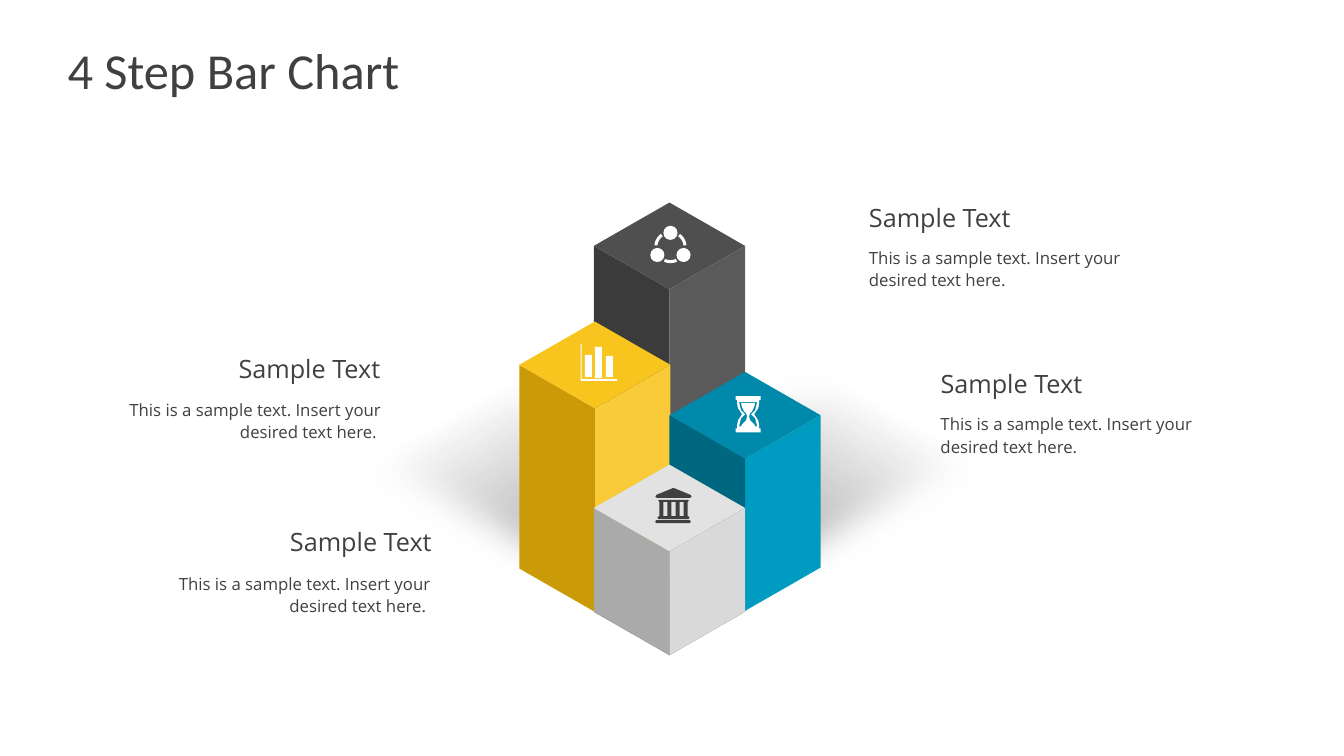
import math
import pptx
import pptx.util
import pptx.dml.color
import pptx.enum.shapes
import pptx.enum.text
import pptx.oxml
from pptx.util import Inches

MSO_SHAPE = pptx.enum.shapes.MSO_SHAPE
ALIGN = pptx.enum.text.PP_ALIGN
ANCHOR = pptx.enum.text.MSO_ANCHOR
NS = 'xmlns:a="http://schemas.openxmlformats.org/drawingml/2006/main"'
TEXT = "404040"
WHITE = "FFFFFF"

prs = pptx.Presentation()
prs.slide_width = Inches(13.33)
prs.slide_height = Inches(7.5)
slide = prs.slides.add_slide(prs.slide_layouts[6])
shapes = slide.shapes


def paint(sp, color):
    sp.shadow.inherit = False
    sp.fill.solid()
    sp.fill.fore_color.rgb = pptx.dml.color.RGBColor.from_string(color)
    sp.line.fill.background()
    return sp


def polygon(color, *contours):
    outline = [[(Inches(x), Inches(y)) for x, y in c] for c in contours]
    builder = shapes.build_freeform(*outline[0][0], scale=1.0)
    builder.add_line_segments(outline[0][1:], close=True)
    for contour in outline[1:]:
        builder.move_to(*contour[0])
        builder.add_line_segments(contour[1:], close=True)
    return paint(builder.convert_to_shape(), color)


# fmt: off
shadow_right = [(7.67, 6.15), (10.55, 4.48), (8.45, 3.2), (5.59, 4.66)]
shadow_left = [(13.33 - x, y + 0.03) for x, y in shadow_right]
for outline, angle in ((shadow_right, 120), (shadow_left, 60)):
    sp = polygon("000000", outline)
    spPr = sp.element.spPr
    gradient = pptx.oxml.parse_xml(
        f'<a:gradFill {NS} rotWithShape="1"><a:gsLst>'
        '<a:gs pos="32000"><a:srgbClr val="FFFFFF"><a:alpha val="65000"/></a:srgbClr></a:gs>'
        '<a:gs pos="99000"><a:srgbClr val="000000"><a:alpha val="55000"/></a:srgbClr></a:gs>'
        f'</a:gsLst><a:lin ang="{angle * 60000}" scaled="0"/></a:gradFill>')
    spPr.replace(spPr.find(pptx.oxml.ns.qn("a:solidFill")), gradient)
    effects = spPr.find(pptx.oxml.ns.qn("a:effectLst"))
    effects.append(pptx.oxml.parse_xml(f'<a:softEdge {NS} rad="{Inches(0.35)}"/>'))

half_w, half_h = 0.75, 0.43
columns = [
    (6.64, 2.01, 6.07, "3B3B3B", "5A5A5A", "4F4F4F"),
    (5.9, 3.19, 5.64, "CA9B06", "F9CB39", "F8C41E"),
    (7.39, 3.69, 5.63, "006780", "009BC0", "0089AA"),
    (6.64, 4.61, 6.07, "AAAAAA", "D9D9D9", "E2E2E2"),
]
for x, top, base, left_color, right_color, top_color in columns:
    middle, front = top + half_h, top + 2 * half_h
    for side, color in ((1, right_color), (-1, left_color)):
        edge = x + side * half_w
        polygon(color, [(x, front), (edge, middle), (edge, base), (x, base + half_h)])
    polygon(top_color, [(x, top), (x + half_w, middle), (x, front), (x - half_w, middle)])

body = "This is a sample text. Insert your desired text here."
labels = [
    (1.16, 3.46, 1.18, 3.9, ALIGN.RIGHT, body + " "),
    (1.67, 5.17, 1.67, 5.62, ALIGN.RIGHT, body + " "),
    (8.52, 1.96, 8.52, 2.39, ALIGN.LEFT, body),
    (9.23, 3.6, 9.23, 4.04, ALIGN.LEFT, body),
]
texts = [(0.67, 0.3, 12, 0.78, "4 Step Bar Chart", 36, "Calibri", ALIGN.LEFT, 1.0)]
for head_x, head_y, body_x, body_y, align, words in labels:
    texts.append((body_x, body_y, 2.7, 0.53, words, 12, "Open Sans", align, 1.1))
    texts.append((head_x, head_y, 2.71, 0.4, "Sample Text", 18, "Open Sans", align, 1.0))
for x, y, w, h, words, size, font, align, spacing in texts:
    box = shapes.add_textbox(Inches(x), Inches(y), Inches(w), Inches(h))
    tf = box.text_frame
    tf.word_wrap = True
    if size == 36:
        tf.vertical_anchor = ANCHOR.MIDDLE
        tf.margin_left = tf.margin_right = 0
    p = tf.paragraphs[0]
    p.alignment = align
    p.line_spacing = spacing
    r = p.add_run()
    r.text = words
    r.font.size = pptx.util.Pt(size)
    r.font.name = font
    r.font.color.rgb = pptx.dml.color.RGBColor.from_string(TEXT)

bank_base = shapes.add_shape(MSO_SHAPE.ROUNDED_RECTANGLE, Inches(6.5), Inches(5.16), Inches(0.35), Inches(0.03))
bank_base.adjustments[0] = 0.5
paint(bank_base, TEXT)
bank_hall = [(6.53, 4.96), (6.83, 4.96), (6.83, 4.97), (6.82, 4.98), (6.82, 5.12), (6.84, 5.13),
             (6.83, 5.15), (6.53, 5.15), (6.52, 5.13), (6.54, 5.12), (6.54, 4.98), (6.53, 4.97)]
bank_gaps = [[(x, 4.98), (x, 5.12), (x + 0.04, 5.12), (x + 0.04, 4.98)] for x in (6.58, 6.66, 6.74)]
polygon(TEXT, bank_hall, *bank_gaps)
polygon(TEXT, [(6.68, 4.84), (6.85, 4.91), (6.86, 4.93), (6.84, 4.94),
               (6.52, 4.94), (6.5, 4.93), (6.51, 4.91)])

for center in (90, 210, 330):
    angles = [math.radians(center + step) for step in range(-24, 25, 6)]
    ring = [(0.16, a) for a in angles] + [(0.13, a) for a in reversed(angles)]
    polygon(WHITE, [(6.65 + d * math.cos(a), 2.45 + d * math.sin(a)) for d, a in ring])
for x, y in ((6.58, 2.24), (6.45, 2.46), (6.71, 2.46)):
    paint(shapes.add_shape(MSO_SHAPE.OVAL, Inches(x), Inches(y), Inches(0.14), Inches(0.14)), WHITE)

glass_frame = [(0.125, -0.18), (0.125, -0.14), (0.11, -0.14), (0.11, -0.11), (0.1, -0.06), (0.08, -0.03), (0.06, 0)]
glass_hole = [(0.09, -0.12), (0.08, -0.08), (0.07, -0.04), (0.05, -0.02), (0.03, 0)]
glass_sand = [(0.07, -0.11), (0.06, -0.07), (0.04, -0.03), (0.02, -0.01), (0.01, 0.02),
              (0.02, 0.06), (0.04, 0.08), (0.06, 0.1), (0.07, 0.12)]
halves = [part + [(x, -y) for x, y in reversed(part[:-1])] for part in (glass_frame, glass_hole)]
hourglass = [half + [(-x, y) for x, y in reversed(half)] for half in halves + [glass_sand]]
polygon(WHITE, *[[(7.42 + x, 4.11 + y) for x, y in part] for part in hourglass])

polygon(WHITE, [(5.76, 3.41), (5.77, 3.41), (5.77, 3.76), (6.12, 3.76), (6.12, 3.78), (5.76, 3.78)])
for x, y, h in ((5.8, 3.52, 0.22), (5.9, 3.44, 0.31), (6.01, 3.53, 0.21)):
    paint(shapes.add_shape(MSO_SHAPE.RECTANGLE, Inches(x), Inches(y), Inches(0.07), Inches(h)), WHITE)

prs.save("out.pptx")
